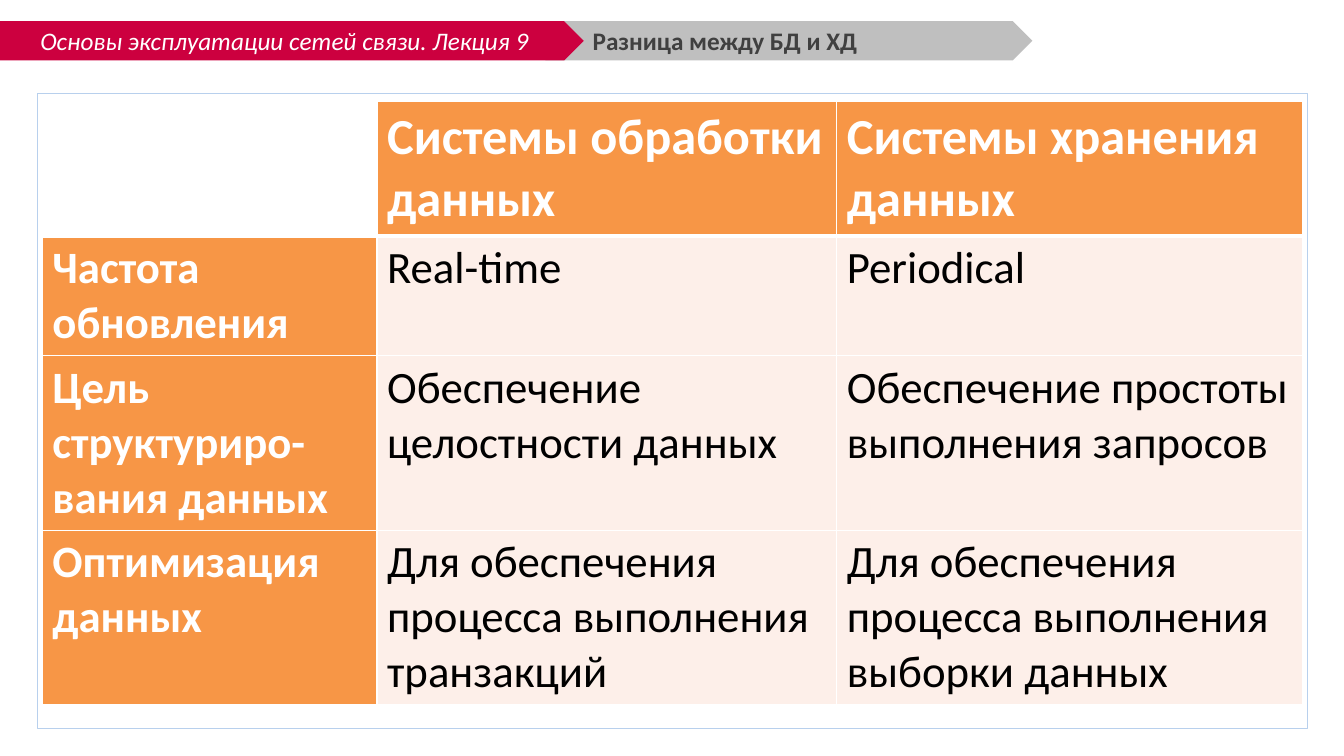
from pptx import Presentation
from pptx.dml.color import RGBColor
from pptx.enum.shapes import MSO_SHAPE
from pptx.enum.text import MSO_ANCHOR, PP_ALIGN
from pptx.oxml import parse_xml
from pptx.oxml.ns import nsdecls
from pptx.util import Inches, Pt


def color(hex_value):
    return RGBColor.from_string(hex_value)


def write(frame, text, size, hex_value, bold=False, italic=False):
    frame.word_wrap = True
    frame.text = text
    font = frame.paragraphs[0].runs[0].font
    font.name = "Calibri"
    font.size = Pt(size)
    font.bold = bold
    font.italic = italic
    font.color.rgb = color(hex_value)


presentation = Presentation()
presentation.slide_width = Inches(13.33)
presentation.slide_height = Inches(7.5)
slide = presentation.slides.add_slide(presentation.slide_layouts[6])

band_top, band_height = Inches(0.21), Inches(0.39)
backdrops = []
for kind, left, top, width, height, fill in [
    (MSO_SHAPE.PENTAGON, 5.41, 0.21, 4.83, 0.39, "BFBFBF"),
    (MSO_SHAPE.RECTANGLE, 0.37, 0.92, 12.6, 6.3, None),
    (MSO_SHAPE.PENTAGON, -0.05, 0.21, 5.84, 0.39, "CC003F"),
]:
    backdrop = slide.shapes.add_shape(
        kind, Inches(left), Inches(top), Inches(width), Inches(height))
    backdrop.shadow.inherit = False
    if fill:
        backdrop.fill.solid()
        backdrop.fill.fore_color.rgb = color(fill)
        backdrop.line.fill.background()
    else:
        backdrop.fill.background()
        backdrop.line.color.rgb = color("B8D0ED")
        backdrop.line.width = Pt(0.25)
    backdrops.append(backdrop)

lecture = backdrops[-1].text_frame
write(lecture, "Основы эксплуатации сетей связи. Лекция 9", 18, "FFFFFF", italic=True)
lecture.vertical_anchor = MSO_ANCHOR.MIDDLE
lecture.paragraphs[0].alignment = PP_ALIGN.CENTER

topic = slide.shapes.add_textbox(Inches(5.78), band_top, Inches(4.14), band_height).text_frame
write(topic, "Разница между БД и ХД", 18, "404040", bold=True)
topic.vertical_anchor = MSO_ANCHOR.MIDDLE

comparison = [
    ["", "Системы обработки данных", "Системы хранения данных"],
    ["Частота обновления", "Real-time", "Periodical"],
    ["Цель структуриро-вания данных", "Обеспечение целостности данных",
     "Обеспечение простоты выполнения запросов"],
    ["Оптимизация данных", "Для обеспечения процесса выполнения транзакций",
     "Для обеспечения процесса выполнения выборки данных"],
]
column_widths = [3.32, 4.56, 4.62]
row_heights = [1.33, 1.19, 1.73, 1.73]
table = slide.shapes.add_table(
    len(row_heights), len(column_widths), Inches(0.42), Inches(1.01),
    Inches(sum(column_widths)), Inches(sum(row_heights))).table
for column, width in zip(table.columns, column_widths):
    column.width = Inches(width)
for row, height in zip(table.rows, row_heights):
    row.height = Inches(height)

for r, texts in enumerate(comparison):
    for c, text in enumerate(texts):
        cell = table.cell(r, c)
        heading = r == 0 or c == 0
        if text:
            write(cell.text_frame, text, 36 if r == 0 else 32,
                  "FFFFFF" if heading else "000000", bold=heading)
            cell.fill.solid()
            cell.fill.fore_color.rgb = color("F79646" if heading else "FDEFE9")
        else:
            cell.fill.background()
        properties = cell._tc.get_or_add_tcPr()
        for position, side in enumerate("LRTB"):
            thick = (r, side) in [(0, "B"), (1, "T")]
            properties.insert(position, parse_xml(
                f'<a:ln{side} {nsdecls("a")} w="{Pt(3 if thick else 1)}">'
                f'<a:solidFill><a:srgbClr val="FFFFFF"/></a:solidFill></a:ln{side}>'))

presentation.save("out.pptx")
